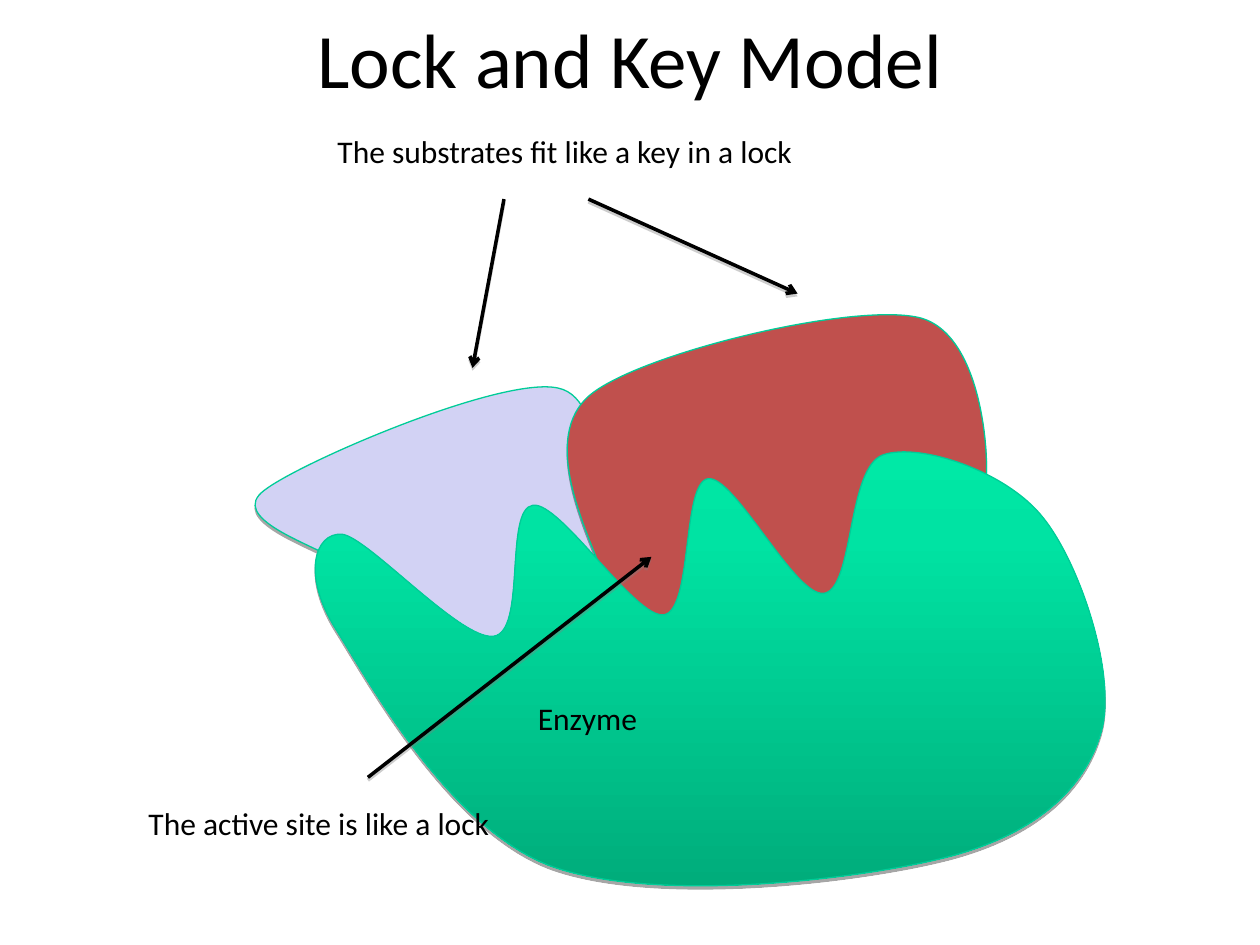
from lxml.etree import SubElement
from pptx import Presentation
from pptx.dml.color import RGBColor
from pptx.enum.shapes import MSO_CONNECTOR as Connector
from pptx.enum.text import MSO_ANCHOR as Anchor, PP_ALIGN as Align
from pptx.oxml.ns import qn
from pptx.util import Cm, Pt

# Content: lengths in inches
TITLE = ("Lock and Key Model", (0.75, 0, 8.5, 0.92))
LABELS = [
    ("The active site is like a lock", (1.08, 6.33, 2.92, 0.91)),
    ("The substrates fit like a key in a lock", (2.58, 1, 4.58, 0.91)),
    ("Enzyme", (4.17, 5.5, 2.92, 0.51)),
]
ARROWS = [
    ((4.67, 1.58), (6.33, 2.33)),
    ((2.92, 6.17), (5.17, 4.42)),
    ((4, 1.58), (3.75, 2.92)),
]
# Outlines: place, then curves as (control, control, end); the last end is the start
SMALL_SUBSTRATE = ((2.02, 3.07, 2.73, 2.18), [
    ((2.85, 4.56), (2.97, 4.48), (3.19, 4.62)),
    ((3.42, 4.75), (3.83, 5.33), (4.01, 5.24)),
    ((4.18, 5.15), (4.15, 4.23), (4.26, 4.1)),
    ((4.38, 3.97), (4.68, 4.65), (4.71, 4.48)),
    ((4.74, 4.31), (4.87, 3.17), (4.43, 3.08)),
    ((3.99, 2.98), (2.4, 3.66), (2.1, 3.89)),
    ((1.8, 4.11), (2.48, 4.32), (2.66, 4.44)),
])
LARGE_SUBSTRATE = ((4.5, 2.5, 3.33, 2.57), [
    ((4.27, 3.47), (4.67, 4.23), (4.78, 4.55)),
    ((4.89, 4.86), (5.23, 5.15), (5.37, 5.04)),
    ((5.51, 4.93), (5.4, 3.9), (5.6, 3.88)),
    ((5.81, 3.85), (6.38, 4.92), (6.62, 4.89)),
    ((6.85, 4.86), (6.82, 3.87), (7.02, 3.7)),
    ((7.22, 3.53), (7.77, 4.07), (7.82, 3.88)),
    ((7.86, 3.68), (7.81, 2.64), (7.29, 2.52)),
    ((6.76, 2.4), (5.1, 2.8), (4.69, 3.13)),
])
ENZYME = ((2.5, 3.58, 6.27, 3.44), [
    ((2.5, 4.23), (2.39, 4.56), (2.67, 5)),
    ((2.94, 5.43), (3.56, 6.56), (4.36, 6.87)),
    ((5.17, 7.17), (6.76, 6.99), (7.49, 6.81)),
    ((8.22, 6.63), (8.61, 6.26), (8.74, 5.81)),
    ((8.87, 5.36), (8.57, 4.47), (8.28, 4.11)),
    ((7.99, 3.74), (7.3, 3.51), (7.01, 3.61)),
    ((6.72, 3.71), (6.78, 4.67), (6.54, 4.71)),
    ((6.31, 4.74), (5.83, 3.77), (5.62, 3.8)),
    ((5.41, 3.83), (5.5, 4.84), (5.27, 4.88)),
    ((5.04, 4.91), (4.45, 3.98), (4.23, 4.01)),
    ((4, 4.04), (4.18, 5.01), (3.92, 5.05)),
    ((3.66, 5.09), (2.91, 4.25), (2.71, 4.24)),
])
ENZYME_STOPS = [(0, "00E9A6"), (20, "00E3A3"), (100, "00AD7B")]


def inches(*values):
    return [Cm(value * 2.54) for value in values]


def color(value):
    return RGBColor.from_string(value)


def add_color(parent, value):
    return SubElement(parent, qn("a:srgbClr"), val=value)


def add_shadow(shape, value, alpha, distance):
    effects = SubElement(shape._element.spPr, qn("a:effectLst"))
    shadow = SubElement(effects, qn("a:outerShdw"), blurRad="0",
                        dist=str(Pt(distance)), dir="5400000",
                        algn="t", rotWithShape="0")
    SubElement(add_color(shadow, value), qn("a:alpha"), val=str(alpha * 1000))


def set_gradient(shape, stops):
    shape.fill.gradient()
    shape.fill.gradient_angle = 270
    stop_list = shape._element.spPr.find(".//" + qn("a:gsLst"))
    for stop in list(stop_list):
        stop_list.remove(stop)
    for position, value in stops:
        add_color(SubElement(stop_list, qn("a:gs"), pos=str(position * 1000)), value)


def set_curves(shape, curves):
    """Replace the straight outline of a freeform by Bézier curves."""
    outline = shape._element.spPr.find(".//" + qn("a:path"))
    for command in list(outline):
        outline.remove(command)

    def add_command(name, points):
        command = SubElement(outline, qn(name))
        for x, y in points:
            x, y = inches(x, y)
            SubElement(command, qn("a:pt"), x=str(x - shape.left), y=str(y - shape.top))

    add_command("a:moveTo", curves[-1][-1:])
    for curve in curves:
        add_command("a:cubicBezTo", curve)
    add_command("a:close", [])


def add_blob(place, curves, fill):
    left, top, width, height = inches(*place)
    right, bottom = left + width, top + height
    builder = page.shapes.build_freeform(left, top)
    builder.add_line_segments([(right, top), (right, bottom), (left, bottom)])
    blob = builder.convert_to_shape()
    set_curves(blob, curves)
    if isinstance(fill, str):
        blob.fill.solid()
        blob.fill.fore_color.rgb = color(fill)
    else:
        set_gradient(blob, fill)
    blob.line.color.rgb = color("00CC98")
    blob.line.width = Pt(0.75)
    add_shadow(blob, "000000", 35, 1.8)


def add_arrow(start, end):
    arrow = page.shapes.add_connector(Connector.STRAIGHT, *inches(*start, *end))
    arrow.line.color.rgb = color("000000")
    arrow.line.width = Pt(2)
    SubElement(arrow.line._get_or_add_ln(), qn("a:tailEnd"), type="arrow")
    add_shadow(arrow, "808080", 38, 1.6)


def add_text(text, place, size=18, align=Align.LEFT, anchor=Anchor.TOP):
    box = page.shapes.add_textbox(*inches(*place))
    frame = box.text_frame
    frame.word_wrap = True
    frame.vertical_anchor = anchor
    para = frame.paragraphs[0]
    para.alignment = align
    span = para.add_run()
    span.text = text
    span.font.name = "Calibri"
    span.font.size = Pt(size)
    span.font.color.rgb = color("000000")


deck = Presentation()
deck.slide_width, deck.slide_height = inches(10, 7.5)
page = deck.slides.add_slide(deck.slide_layouts[6])

# Substrates lie behind the enzyme
add_blob(*SMALL_SUBSTRATE, fill="D2D2F4")
add_blob(*LARGE_SUBSTRATE, fill="C0504D")
add_blob(*ENZYME, fill=ENZYME_STOPS)

# Title, labels and arrows
add_text(*TITLE, size=44, align=Align.CENTER, anchor=Anchor.MIDDLE)
for label in LABELS:
    add_text(*label)
for arrow_ends in ARROWS:
    add_arrow(*arrow_ends)

deck.save("out.pptx")
